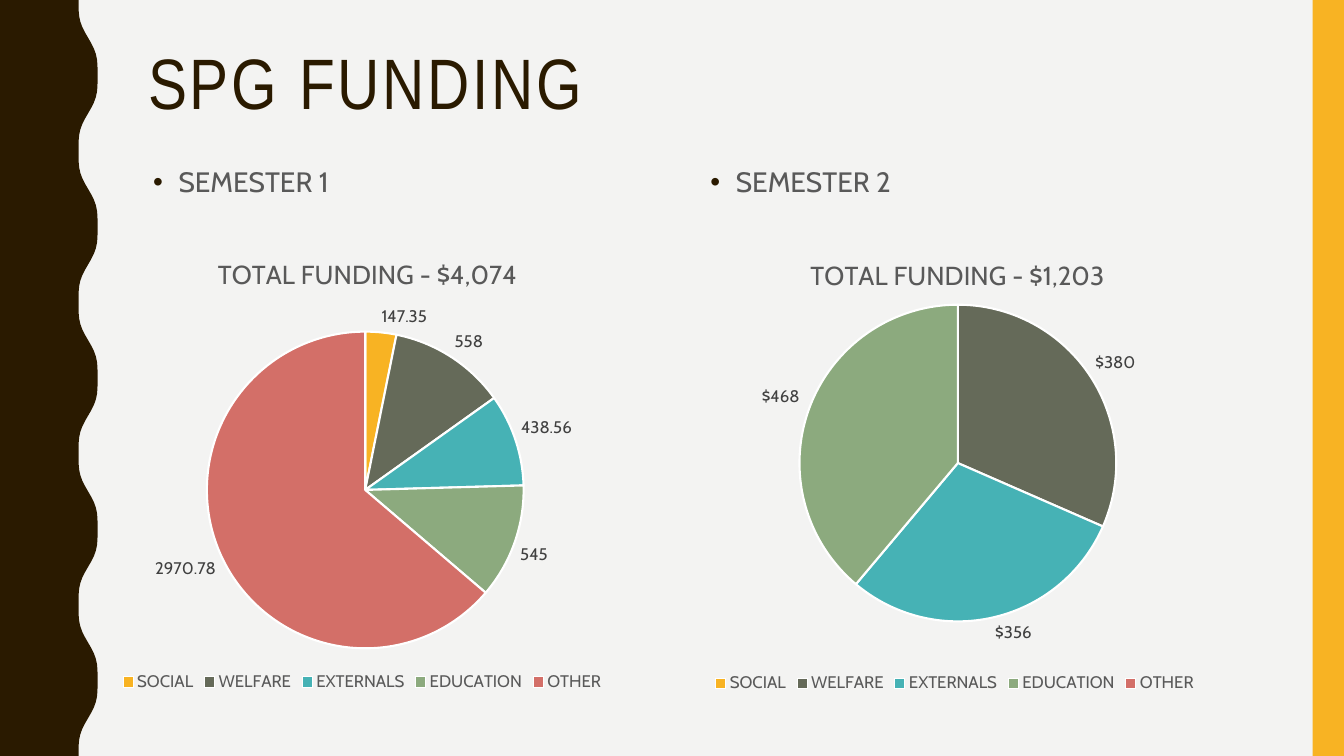
import math

import lxml.etree
import pptx
import pptx.chart.data
import pptx.dml.color
import pptx.enum.chart
import pptx.enum.shapes
import pptx.enum.text
import pptx.oxml
import pptx.oxml.ns
import pptx.util
from pptx.util import Cm

WIDTH, HEIGHT = 33.86, 19.05
CATEGORIES = ["SOCIAL", "WELFARE", "EXTERNALS", "EDUCATION", "OTHER"]
SLICES = ["F8B323", "656A59", "46B2B5", "8CAA7E", "D36F68"]
DOLLARS = '"$"#,##0_);[Red]\\("$"#,##0\\);'


def color(value):
    return pptx.dml.color.RGBColor.from_string(value)


def style_font(font, size, fill, name="Cabin"):
    font.size = pptx.util.Pt(size)
    font.name = name
    font.bold = False
    font.color.rgb = color(fill)


def write(paragraph, text, size, fill, name="Cabin", spacing=None, tracking=0):
    span = paragraph.add_run()
    span.text = text
    style_font(span.font, size, fill, name)
    if spacing:
        paragraph.line_spacing = spacing
    if tracking:
        span.font._element.set("spc", str(tracking * 100))


def set_layout(parent, position, **fractions):
    tag = pptx.oxml.ns.qn
    layout = parent.find(tag("c:layout"))
    if layout is None:
        layout = lxml.etree.Element(tag("c:layout"))
        parent.insert(position, layout)
    manual = lxml.etree.SubElement(layout, tag("c:manualLayout"))
    if "w" in fractions:
        lxml.etree.SubElement(manual, tag("c:layoutTarget"), val="inner")
    for axis in "xy":
        lxml.etree.SubElement(manual, tag(f"c:{axis}Mode"), val="edge")
    for key, value in fractions.items():
        lxml.etree.SubElement(manual, tag(f"c:{key}"), val=str(value))


class FundingSlide:
    """Holds the colours and the page, and adds each kind of element."""

    dark, gold, grey, label = "2A1A00", "F8B323", "595959", "404040"

    def __init__(self, deck):
        self.page = deck.slides.add_slide(deck.slide_layouts[5])
        self.page.background.fill.solid()
        self.page.background.fill.fore_color.rgb = color("F3F3F2")

    def paint(self, shape, fill):
        shape.shadow.inherit = False
        shape.fill.solid()
        shape.fill.fore_color.rgb = color(fill)
        shape.line.fill.background()

    def wave(self, waves=5, steps=28):
        points = []
        for step in range(waves * steps + 1):
            angle = 2 * math.pi * step / steps
            x = 2.22 - 0.27 * math.cos(angle) + 0.03 * math.cos(3 * angle)
            points.append((Cm(x), Cm(HEIGHT * step / (waves * steps))))
        builder = self.page.shapes.build_freeform(0, 0)
        builder.add_line_segments(points + [(0, Cm(HEIGHT))], close=True)
        self.paint(builder.convert_to_shape(), self.dark)

    def bar(self, left, width):
        shape = self.page.shapes.add_shape(
            pptx.enum.shapes.MSO_SHAPE.RECTANGLE, Cm(left), 0, Cm(width), Cm(HEIGHT))
        self.paint(shape, self.gold)

    def title(self, text):
        box = self.page.shapes.title
        box.left, box.top, box.width, box.height = Cm(3.48), Cm(1.07), Cm(28.27), Cm(4.14)
        frame = box.text_frame
        frame.auto_size = pptx.enum.text.MSO_AUTO_SIZE.NONE
        frame.vertical_anchor = pptx.enum.text.MSO_ANCHOR.TOP
        frame.paragraphs[0].alignment = pptx.enum.text.PP_ALIGN.LEFT
        write(frame.paragraphs[0], text, 51, self.dark, "Arial Narrow", 0.9, 2)

    def bullet(self, text, left):
        box = self.page.shapes.add_textbox(Cm(left), Cm(3.94), Cm(13.33), Cm(10.06))
        box.text_frame.word_wrap = True
        paragraph = box.text_frame.paragraphs[0]
        properties = paragraph._p.get_or_add_pPr()
        properties.set("marL", str(Cm(0.64)))
        properties.set("indent", str(-Cm(0.64)))
        namespace = pptx.oxml.ns.nsdecls("a")
        for markup in (
            f'<a:buClr {namespace}><a:srgbClr val="{self.dark}"/></a:buClr>',
            f'<a:buFont {namespace} typeface="Arial"/>',
            f'<a:buChar {namespace} char="•"/>',
        ):
            properties.append(pptx.oxml.parse_xml(markup))
        write(paragraph, text, 20, self.grey, spacing=1.1)

    def pie(self, title, values, left, top, pie_top, number_format="General"):
        data = pptx.chart.data.CategoryChartData()
        data.categories = CATEGORIES
        data.add_series("Series 1", values)
        chart = self.page.shapes.add_chart(
            pptx.enum.chart.XL_CHART_TYPE.PIE,
            Cm(left), Cm(top), Cm(15.65), Cm(11.8), data).chart
        style_font(chart.font, 10, "000000")
        write(chart.chart_title.text_frame.paragraphs[0], title, 18.6, self.grey)
        set_layout(chart.chart_title._element, 1, x=0.26, y=0.05)
        set_layout(chart._chartSpace.chart.plotArea, 0, x=0.25, y=pie_top, w=0.51, h=0.68)
        chart.has_legend = True
        chart.legend.position = pptx.enum.chart.XL_LEGEND_POSITION.BOTTOM
        chart.legend.include_in_layout = False
        style_font(chart.legend.font, 12, self.grey)
        plot = chart.plots[0]
        plot.vary_by_categories = True
        for index, fill in enumerate(SLICES):
            piece = plot.series[0].points[index].format
            piece.fill.solid()
            piece.fill.fore_color.rgb = color(fill)
            piece.line.color.rgb = color("FFFFFF")
            piece.line.width = pptx.util.Pt(1.5)
        labels = plot.series[0].data_labels
        labels.show_value = True
        labels.position = pptx.enum.chart.XL_LABEL_POSITION.OUTSIDE_END
        labels.number_format = number_format
        labels.number_format_is_linked = False
        style_font(labels.font, 12, self.label)


def main():
    deck = pptx.Presentation()
    deck.slide_width, deck.slide_height = Cm(WIDTH), Cm(HEIGHT)
    slide = FundingSlide(deck)
    slide.wave()
    slide.bar(33.07, 0.79)
    slide.title("SPG FUNDING")
    slide.bullet("SEMESTER 1", 3.61)
    slide.bullet("SEMESTER 2", 17.65)
    slide.pie("TOTAL FUNDING - $4,074", [147.35, 558, 438.56, 545, 2970.78], 1.3, 5.74, 0.22)
    slide.pie("TOTAL FUNDING - $1,203", [0, 380, 356, 468, 0], 16.23, 5.77, 0.16, DOLLARS)
    deck.save("out.pptx")


if __name__ == "__main__":
    main()
